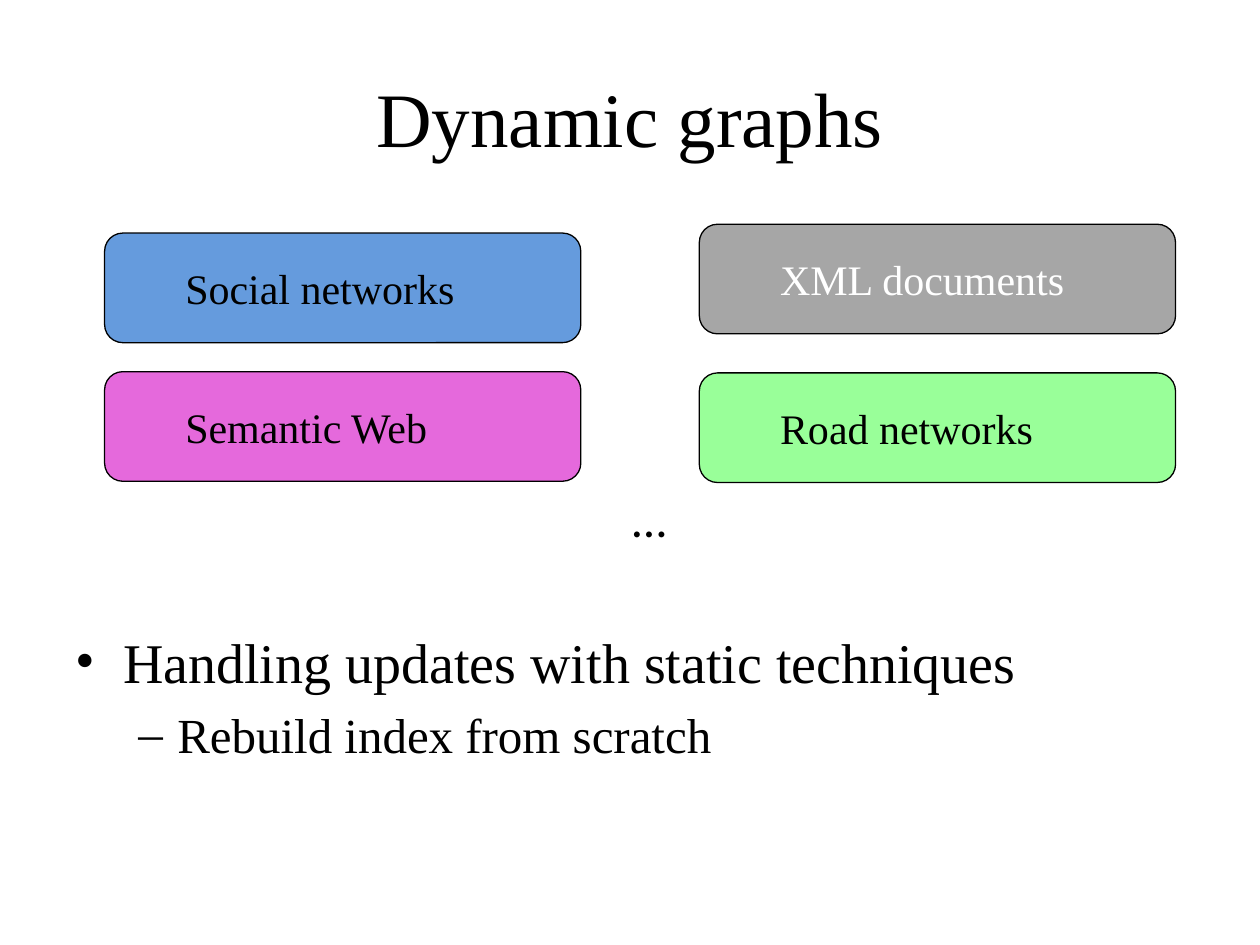
"""Build the slide on dynamic graphs: four example areas and a bulleted list."""
from lxml import etree
from pptx import Presentation
from pptx.dml.color import RGBColor
from pptx.enum.shapes import MSO_SHAPE
from pptx.enum.text import MSO_ANCHOR, PP_ALIGN
from pptx.oxml.ns import qn
from pptx.util import Inches, Pt

ROUNDED = MSO_SHAPE.ROUNDED_RECTANGLE
MIDDLE, TOP = MSO_ANCHOR.MIDDLE, MSO_ANCHOR.TOP
LEFT, CENTER = PP_ALIGN.LEFT, PP_ALIGN.CENTER
CELL = Inches(0.1)
COLUMNS, ROWS = 100, 75


def grid(*cells):
    return [round(CELL * count) for count in cells]


def write(para, text, size, font="Times New Roman", color="000000",
          align=LEFT, margin=0, hanging=0, bullet=None, before=0):
    para.alignment = align
    para.space_before = Pt(before)
    properties = para._p.get_or_add_pPr()
    properties.set("marL", str(Inches(margin)))
    properties.set("indent", str(-Inches(hanging)))
    if bullet:
        etree.SubElement(properties, qn("a:buFont"), typeface=font)
        etree.SubElement(properties, qn("a:buChar"), char=bullet)
    span = para.add_run()
    span.text = text
    span.font.name = font
    span.font.size = Pt(size)
    span.font.color.rgb = RGBColor.from_string(color)


deck = Presentation()
deck.slide_width, deck.slide_height = grid(COLUMNS, ROWS)
page = deck.slides.add_slide(deck.slide_layouts[6])

frames = []
for left, top, width, height, anchor in [
    (5, 3, 90, 12.5, MIDDLE),
    (5, 49.3, 90, 17.7, TOP),
    (49.2, 38.3, 7.1, 5.7, TOP),
]:
    frame = page.shapes.add_textbox(*grid(left, top, width, height)).text_frame
    frame.word_wrap = True
    frame.vertical_anchor = anchor
    frames.append(frame)
title, points, ellipsis = frames

write(title.paragraphs[0], "Dynamic graphs", 44, align=CENTER)
write(points.paragraphs[0], "Handling updates with static techniques", 32,
      margin=0.38, hanging=0.38, bullet="•")
write(points.add_paragraph(), "Rebuild index from scratch", 28,
      margin=0.81, hanging=0.31, bullet="–", before=5.6)
write(ellipsis.paragraphs[0], "…", 28, font="Calibri")

for text, left, top, fill, color in [
    ("Social networks", 8.3, 18.5, "659BDD", "000000"),
    ("Semantic Web", 8.3, 29.5, "E569DC", "000000"),
    ("XML documents", 55.5, 17.8, "A6A6A6", "FFFFFF"),
    ("Road networks", 55.5, 29.6, "99FF99", "000000"),
]:
    box = page.shapes.add_shape(ROUNDED, *grid(left, top, 37.8, 8.7))
    box.shadow.inherit = False
    box.fill.solid()
    box.fill.fore_color.rgb = RGBColor.from_string(fill)
    box.line.color.rgb = RGBColor.from_string("000000")
    box.line.width = Pt(0.75)
    box.text_frame.vertical_anchor = MIDDLE
    write(box.text_frame.paragraphs[0], text, 24, color=color, margin=0.5)

deck.save("out.pptx")
